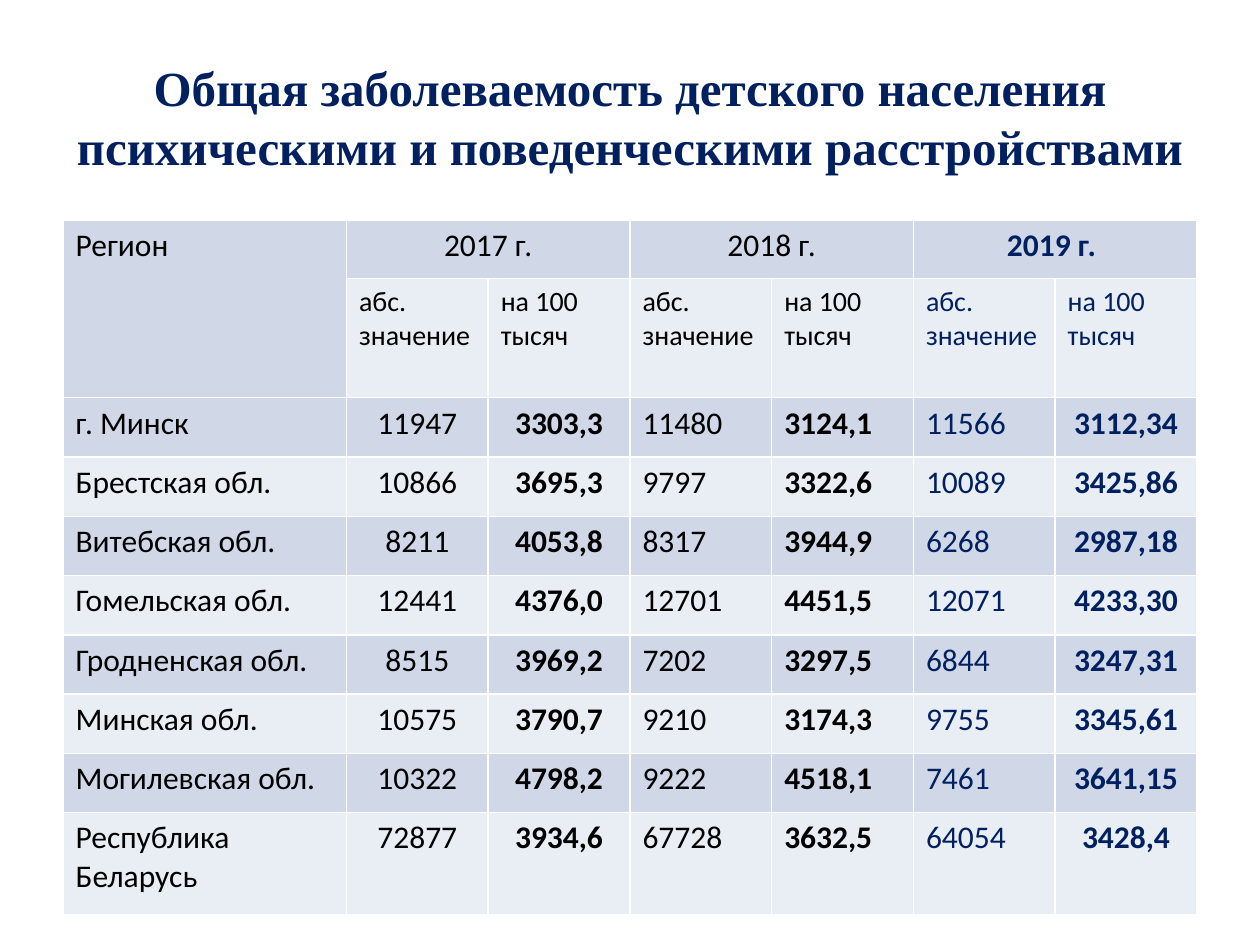
from pptx import Presentation
from pptx.dml.color import RGBColor
from pptx.enum.text import MSO_ANCHOR, PP_ALIGN
from pptx.oxml import parse_xml
from pptx.oxml.ns import nsdecls
from pptx.util import Pt

TITLE = "Общая заболеваемость детского населения психическими и поведенческими расстройствами"
YEARS = ["2017 г.", "2018 г.", "2019 г. "]
HEADS = ["абс.\nзначение", "на 100 тысяч", "абс. значение",
         "на 100 тысяч", "абс. значение", "на 100 тысяч"]
DATA = [
    ("г. Минск", "11947", "3303,3", "11480", "3124,1", "11566", "3112,34"),
    ("Брестская обл.", "10866", "3695,3", "9797", "3322,6", "10089", "3425,86"),
    ("Витебская обл.", "8211", "4053,8", "8317", "3944,9", "6268", "2987,18"),
    ("Гомельская обл.", "12441", "4376,0", "12701", "4451,5", "12071", "4233,30"),
    ("Гродненская обл.", "8515", "3969,2", "7202", "3297,5", "6844", "3247,31"),
    ("Минская обл.", "10575", "3790,7", "9210", "3174,3", "9755", "3345,61"),
    ("Могилевская обл.", "10322", "4798,2", "9222", "4518,1", "7461", "3641,15"),
    ("Республика Беларусь", "72877", "3934,6", "67728", "3632,5", "64054", "3428,4"),
]
COLORS = {"navy": "002060", "black": "000000", "white": "FFFFFF",
          "dark": "D0D8E8", "light": "E9EDF4"}
LEFT, WIDTH = 36, 648
COLS = [162] + [81] * 6
ROWS = [33.3, 68] + [33.9] * 7 + [58.1]
NEW = 5  # first column of the latest year
MID = (1, 2, 6)  # columns with centred values


def write(frame, text, size=18, font="Calibri", color="black", bold=False, center=False):
    frame.word_wrap = True
    for i, line in enumerate(text.split("\n")):
        par = frame.add_paragraph() if i else frame.paragraphs[0]
        par.alignment = PP_ALIGN.CENTER if center else PP_ALIGN.LEFT
        run = par.add_run()
        run.text = line
        run.font.size = Pt(size)
        run.font.name = font
        run.font.bold = bold
        run.font.color.rgb = RGBColor.from_string(COLORS[color])


def paint(cell, fill):
    """Give a cell white borders and a plain fill."""
    props = cell._tc.get_or_add_tcPr()
    for side in "LRTB":
        props.append(parse_xml(
            f'<a:ln{side} {nsdecls("a")} w="{Pt(1)}"><a:solidFill>'
            f'<a:srgbClr val="{COLORS["white"]}"/></a:solidFill></a:ln{side}>'))
    cell.fill.solid()
    cell.fill.fore_color.rgb = RGBColor.from_string(COLORS[fill])


def tint(col):
    return "navy" if col >= NEW else "black"


def main():
    deck = Presentation()
    deck.slide_width, deck.slide_height = Pt(720), Pt(540)
    slide = deck.slides.add_slide(deck.slide_layouts[6])

    box = slide.shapes.add_textbox(Pt(LEFT), Pt(21.6), Pt(WIDTH), Pt(90))
    box.text_frame.vertical_anchor = MSO_ANCHOR.MIDDLE
    write(box.text_frame, TITLE, size=28, font="Times New Roman",
          color="navy", bold=True, center=True)

    table = slide.shapes.add_table(len(ROWS), len(COLS), Pt(LEFT), Pt(126),
                                   Pt(WIDTH), Pt(sum(ROWS))).table
    for col, width in zip(table.columns, COLS):
        col.width = Pt(width)
    for r, (row, height) in enumerate(zip(table.rows, ROWS)):
        row.height = Pt(height)
        for cell in row.cells:
            paint(cell, "light" if r % 2 else "dark")

    table.cell(0, 0).merge(table.cell(1, 0))
    write(table.cell(0, 0).text_frame, "Регион")
    for i, year in enumerate(YEARS):
        c = 1 + 2 * i
        table.cell(0, c).merge(table.cell(0, c + 1))
        write(table.cell(0, c).text_frame, year, color=tint(c),
              bold=c >= NEW, center=True)
    for c, head in enumerate(HEADS, 1):
        write(table.cell(1, c).text_frame, head, size=16, color=tint(c))
    for r, values in enumerate(DATA, 2):
        for c, value in enumerate(values):
            write(table.cell(r, c).text_frame, value, color=tint(c),
                  bold=c > 0 and c % 2 == 0, center=c in MID)

    deck.save("out.pptx")


if __name__ == "__main__":
    main()
